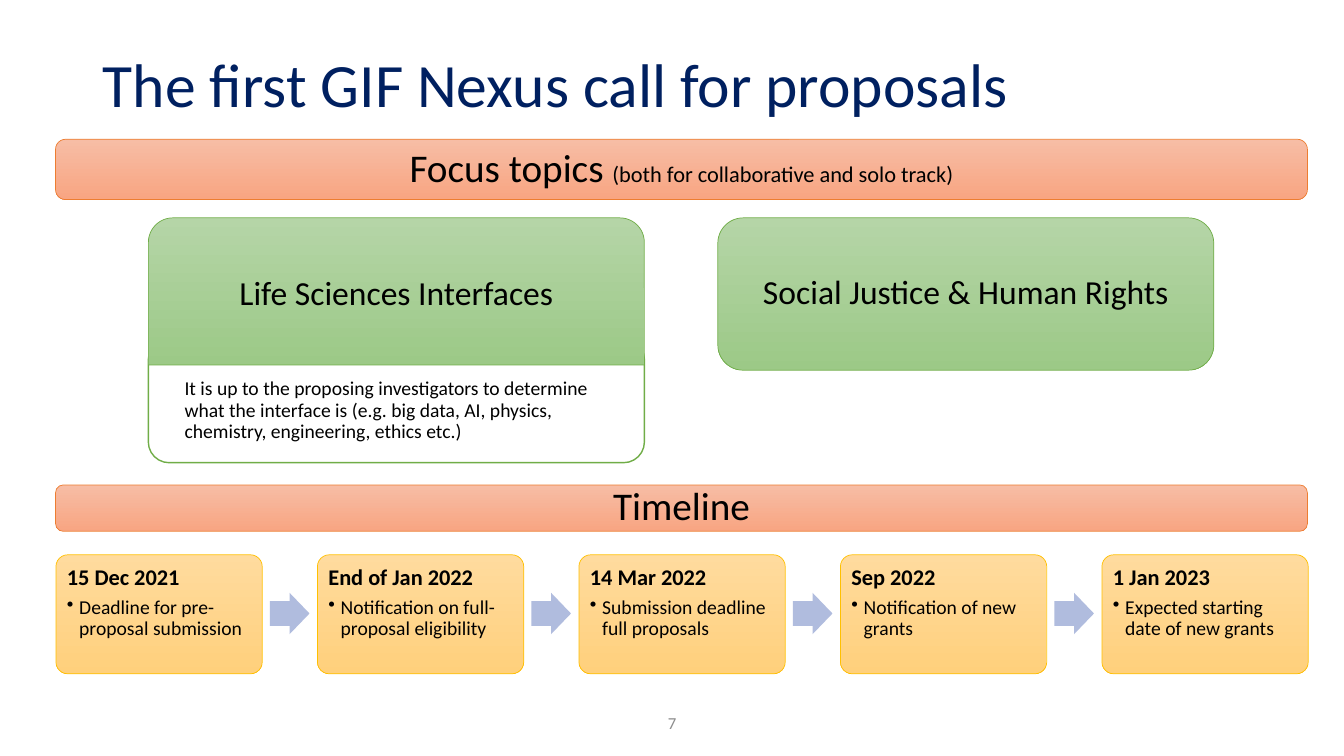
from lxml.etree import SubElement
from pptx import Presentation
from pptx.dml.color import RGBColor
from pptx.enum.shapes import MSO_SHAPE
from pptx.enum.text import MSO_ANCHOR, MSO_AUTO_SIZE, PP_ALIGN
from pptx.oxml.ns import qn
from pptx.util import Cm, Pt

NAVY = RGBColor(0x00, 0x20, 0x60)
BLACK = RGBColor(0x00, 0x00, 0x00)
WHITE = RGBColor(0xFF, 0xFF, 0xFF)
GRAY = RGBColor(0x8C, 0x8C, 0x8C)
ORANGE = RGBColor(0xED, 0x7D, 0x31)
ORANGE_FADE = (RGBColor(0xF7, 0xBD, 0xA5), RGBColor(0xF8, 0xA5, 0x82))
GREEN = RGBColor(0x70, 0xAD, 0x47)
GREEN_FADE = (RGBColor(0xB5, 0xD5, 0xA7), RGBColor(0x9C, 0xC9, 0x87))
GOLD = RGBColor(0xFF, 0xC0, 0x00)
GOLD_FADE = (RGBColor(0xFF, 0xDB, 0x9E), RGBColor(0xFF, 0xD0, 0x7C))
ARROW_BLUE = RGBColor(0xB0, 0xBC, 0xDE)


def add_box(kind, at, fade, outline, insets, anchor=MSO_ANCHOR.MIDDLE):
    """Add a shape with a top-to-bottom fade; at and insets are in cm."""
    box = slide.shapes.add_shape(kind, *(Cm(length) for length in at))
    box.shadow.inherit = False
    box.fill.gradient()
    box.fill.gradient_angle = 270
    for stop, position, color in zip(box.fill.gradient_stops, (0, 1), fade):
        stop.position = position
        stop.color.rgb = color
    box.line.color.rgb = outline
    box.line.width = Pt(0.5)
    frame = box.text_frame
    frame.word_wrap = True
    frame.vertical_anchor = anchor
    frame.margin_left, frame.margin_top, frame.margin_right, frame.margin_bottom = (
        Cm(inset) for inset in insets)
    return box


def add_run(paragraph, text, size, color=BLACK, bold=False):
    paragraph.line_spacing = 0.9
    run = paragraph.add_run()
    run.text = text
    run.font.name = "Calibri"
    run.font.size = Pt(size)
    run.font.bold = bold
    run.font.color.rgb = color


prs = Presentation()
prs.slide_width, prs.slide_height = Cm(33.87), Cm(19.05)
slide = prs.slides.add_slide(prs.slide_layouts[5])

title = slide.shapes.title
title.left, title.top, title.width, title.height = Cm(2.34), Cm(1.02), Cm(29.2), Cm(2.36)
title.text_frame.auto_size = MSO_AUTO_SIZE.NONE
title.text_frame.vertical_anchor = MSO_ANCHOR.MIDDLE
heading = title.text_frame.paragraphs[0]
heading.alignment = PP_ALIGN.LEFT
add_run(heading, "The first GIF Nexus call for proposals", 44, NAVY)

page_number = slide.shapes.add_textbox(Cm(13.13), Cm(17.73), Cm(7.62), Cm(1.02)).text_frame
page_number.word_wrap = True
page_number.vertical_anchor = MSO_ANCHOR.MIDDLE
page_number.paragraphs[0].alignment = PP_ALIGN.CENTER
add_run(page_number.paragraphs[0], "7", 12, GRAY)

# Section bars
section_bars = [
    (3.51, 1.52, [("Focus topics ", 28), ("(both for collaborative and solo track)", 16)]),
    (12.22, 1.17, [("Timeline", 28)]),
]
for top, height, wording in section_bars:
    bar = add_box(MSO_SHAPE.ROUNDED_RECTANGLE, (1.4, top, 31.55, height),
                  ORANGE_FADE, ORANGE, (0.3,) * 4)
    bar_label = bar.text_frame.paragraphs[0]
    bar_label.alignment = PP_ALIGN.CENTER
    for text, size in wording:
        add_run(bar_label, text, size)

# Focus topics, with the note tucked under the first one
note = add_box(MSO_SHAPE.ROUNDED_RECTANGLE, (3.74, 8.53, 12.5, 3.13),
               GREEN_FADE, GREEN, (0.76, 0.87, 0.36, 0.2), MSO_ANCHOR.TOP)
note.fill.solid()
note.fill.fore_color.rgb = WHITE
note.line.width = Pt(1)
note.text_frame.paragraphs[0].alignment = PP_ALIGN.LEFT
add_run(note.text_frame.paragraphs[0],
        "It is up to the proposing investigators to determine what the interface is "
        "(e.g. big data, AI, physics, chemistry, engineering, ethics etc.)", 14)

topics = [
    (MSO_SHAPE.ROUNDED_RECTANGLE, 18.09, 3.84, "Social Justice & Human Rights"),
    (MSO_SHAPE.ROUND_2_SAME_RECTANGLE, 3.74, 3.71, "Life Sciences Interfaces"),
]
for kind, left, height, name in topics:
    topic = add_box(kind, (left, 5.49, 12.5, height), GREEN_FADE, GREEN,
                    (0.76, 0.43, 0.76, 0.43))
    topic.text_frame.paragraphs[0].alignment = PP_ALIGN.CENTER
    add_run(topic.text_frame.paragraphs[0], name, 24)

# Timeline
milestones = [
    ("15 Dec 2021", "Deadline for pre-proposal submission"),
    ("End of Jan 2022", "Notification on full-proposal eligibility"),
    ("14 Mar 2022", "Submission deadline full proposals"),
    ("Sep 2022", "Notification of new grants"),
    ("1 Jan 2023", "Expected starting date of new grants"),
]
for i, (date, event) in enumerate(milestones):
    left = 1.41 + i * 6.59
    card = add_box(MSO_SHAPE.ROUNDED_RECTANGLE, (left, 13.98, 5.2, 3),
                   GOLD_FADE, GOLD, (0.19,) * 4, MSO_ANCHOR.TOP)
    card.adjustments[0] = 0.1
    date_line = card.text_frame.paragraphs[0]
    date_line.alignment = PP_ALIGN.LEFT
    date_line.space_after = Pt(5.5)
    add_run(date_line, date, 16, bold=True)

    event_line = card.text_frame.add_paragraph()
    event_line.level = 1
    event_line.alignment = PP_ALIGN.LEFT
    properties = event_line._p.get_or_add_pPr()
    properties.set("marL", str(Cm(0.31)))
    properties.set("indent", str(-Cm(0.31)))
    SubElement(properties, qn("a:buChar")).set("char", "•")
    add_run(event_line, event, 14)

    if i < len(milestones) - 1:
        arrow = slide.shapes.add_shape(MSO_SHAPE.RIGHT_ARROW, Cm(left + 5.39), Cm(14.94),
                                       Cm(1), Cm(1.04))
        arrow.adjustments[0] = 0.6
        arrow.shadow.inherit = False
        arrow.fill.solid()
        arrow.fill.fore_color.rgb = ARROW_BLUE
        arrow.line.fill.background()

prs.save("out.pptx")
